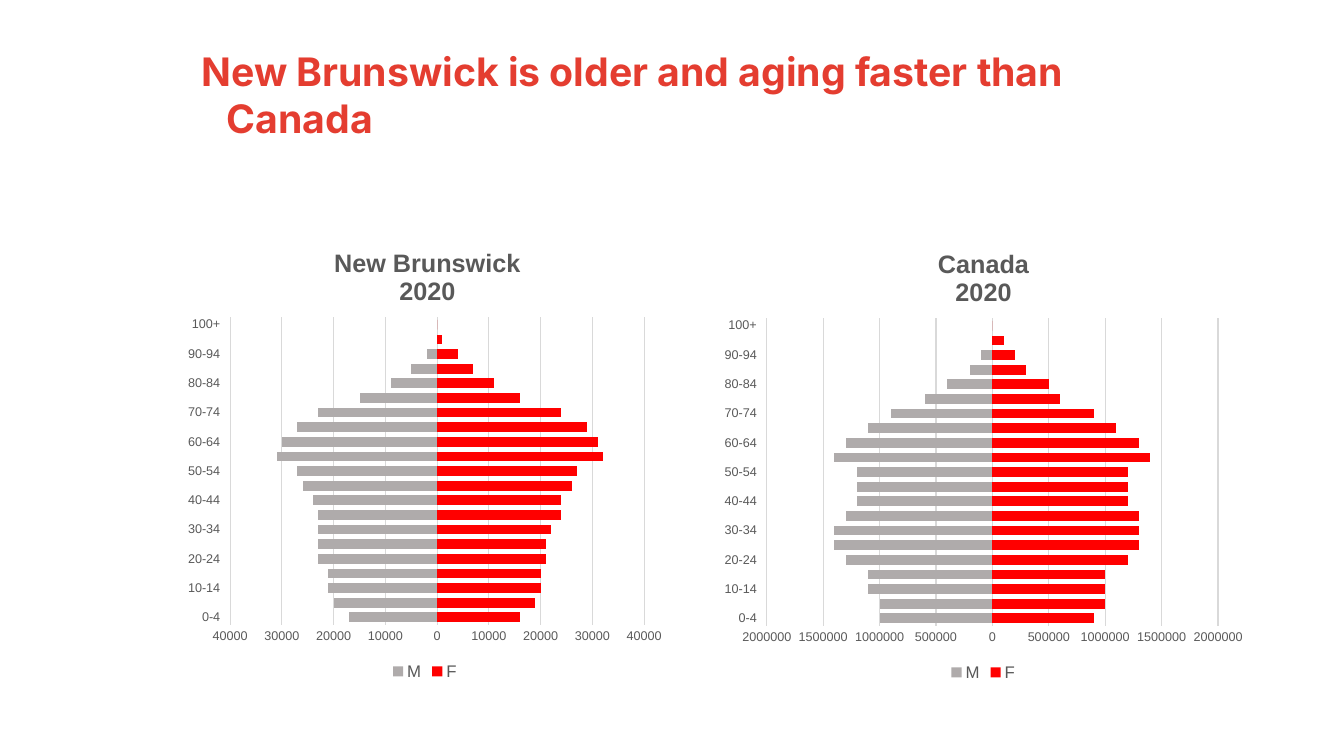
from dataclasses import dataclass

from lxml import etree
from pptx import Presentation
from pptx import util as u
from pptx.chart.data import CategoryChartData
from pptx.dml.color import RGBColor
from pptx.enum import chart as ch
from pptx.enum import text
from pptx.oxml import parse_xml
from pptx.oxml.ns import nsdecls

COLORS = {"title": "E43D30", "text": "595959", "grid": "D9D9D9",
          "M": "AFABAB", "F": "FF0000"}
CELL = u.Inches(1 / 12)  # the slide is 160 columns by 90 rows
AGES = [f"{a}-{a + 4}" for a in range(0, 100, 5)] + ["100+"]


@dataclass
class Box:
    col: float
    row: float
    cols: float
    rows: float

    def emu(self) -> list[int]:
        return [round(n * CELL) for n in (self.col, self.row, self.cols, self.rows)]


@dataclass
class Pyramid:
    place: str
    box: Box
    title_x: float
    plot_x: float
    unit: int
    limit: int
    step: int
    men: list[int]
    women: list[int]


PYRAMIDS = [
    Pyramid("New Brunswick", Box(21.24, 26.88, 58.68, 54.6), 0.31, 0.105,
            1000, 40000, 10000,
            [17, 20, 21, 21, 23, 23, 23, 23, 24, 26, 27, 31, 30, 27, 23, 15, 9, 5, 2, 0, 0],
            [16, 19, 20, 20, 21, 21, 22, 24, 24, 26, 27, 32, 31, 29, 24, 16, 11, 7, 4, 1, 0]),
    Pyramid("Canada", Box(85.08, 27, 63.96, 54.6), 0.41, 0.097,
            100000, 2000000, 500000,
            [10, 10, 11, 11, 13, 14, 14, 13, 12, 12, 12, 14, 13, 11, 9, 6, 4, 2, 1, 0, 0],
            [9, 10, 10, 10, 12, 13, 13, 13, 12, 12, 12, 14, 13, 11, 9, 6, 5, 3, 2, 1, 0]),
]


def rgb(name: str) -> RGBColor:
    return RGBColor.from_string(COLORS[name])


def style_font(font, size: float, color: str, name: str = "Arial", bold: bool = False) -> None:
    font.size, font.name, font.bold = u.Pt(size), name, bold
    font.color.rgb = rgb(color)


def style_line(line) -> None:
    line.color.rgb = rgb("grid")
    line.width = u.Pt(0.75)


def manual_layout(inner: bool, **shares: float) -> etree._Element:
    target = '<c:layoutTarget val="inner"/>' if inner else ""
    modes = '<c:xMode val="edge"/><c:yMode val="edge"/>'
    sizes = "".join(f'<c:{k} val="{v}"/>' for k, v in shares.items())
    return parse_xml(f'<c:layout {nsdecls("c")}><c:manualLayout>{target}{modes}{sizes}'
                     '</c:manualLayout></c:layout>')


def set_layout(parent, layout, before: str) -> None:
    for old in parent.findall(layout.tag):
        parent.remove(old)
    parent.xpath(before)[0].addprevious(layout)


def add_title(s, box: Box, words: str) -> None:
    sp = s.shapes.title
    sp.left, sp.top, sp.width, sp.height = box.emu()
    tf = sp.text_frame
    tf.word_wrap, tf.auto_size = True, text.MSO_AUTO_SIZE.NONE
    tf.vertical_anchor = text.MSO_ANCHOR.TOP
    p = tf.paragraphs[0]
    p.alignment = text.PP_ALIGN.LEFT
    pPr = p._p.get_or_add_pPr()
    pPr.set("marL", str(u.Inches(0.5)))
    pPr.set("indent", str(u.Inches(-0.25)))
    r = p.add_run()
    r.text = words
    style_font(r.font, 28, "title", "Inter", True)


def add_pyramid(s, item: Pyramid) -> None:
    data = CategoryChartData()
    data.categories = AGES
    data.add_series("M", [-v * item.unit for v in item.men])
    data.add_series("F", [v * item.unit for v in item.women])
    chart = s.shapes.add_chart(ch.XL_CHART_TYPE.BAR_STACKED, *item.box.emu(), data).chart
    style_font(chart.font, 10, "text")

    # Chart title
    tf = chart.chart_title.text_frame
    for i, line in enumerate((item.place, "2020")):
        p = tf.add_paragraph() if i else tf.paragraphs[0]
        r = p.add_run()
        r.text = line
        style_font(r.font, 18, "text", bold=True)
    chart.chart_title.include_in_layout = False
    set_layout(chart.chart_title._element, manual_layout(False, x=item.title_x, y=0.04),
               "c:overlay")

    # Bars
    plot = chart.plots[0]
    plot.gap_width, plot.overlap, plot.vary_by_categories = 50, 100, False
    for series in plot.series:
        series.invert_if_negative = False
        series.format.fill.solid()
        series.format.fill.fore_color.rgb = rgb(series.name)
    set_layout(chart._chartSpace.xpath("c:chart/c:plotArea")[0],
               manual_layout(True, x=item.plot_x, y=0.2, w=0.84, h=0.67), "c:barChart")

    # Axes
    ages, people = chart.category_axis, chart.value_axis
    for axis in (ages, people):
        axis.major_tick_mark = axis.minor_tick_mark = ch.XL_TICK_MARK.NONE
        style_font(axis.tick_labels.font, 9, "text")
    ages.tick_label_position = ch.XL_TICK_LABEL_POSITION.LOW
    style_line(ages.format.line)
    people.minimum_scale, people.maximum_scale = -item.limit, item.limit
    people.major_unit = item.step
    people.tick_labels.number_format = "0;0"
    people.tick_labels.number_format_is_linked = False
    people.format.line.fill.background()
    people.has_major_gridlines = True
    style_line(people.major_gridlines.format.line)

    # Legend
    chart.has_legend = True
    chart.legend.position = ch.XL_LEGEND_POSITION.BOTTOM
    chart.legend.include_in_layout = False
    style_font(chart.legend.font, 12, "text")


def main() -> None:
    prs = Presentation()
    prs.slide_width, prs.slide_height = 160 * CELL, 90 * CELL
    s = prs.slides.add_slide(prs.slide_layouts[5])
    add_title(s, Box(19.8, 5.04, 116.52, 15.6),
              "New Brunswick is older and aging faster than Canada")
    for item in PYRAMIDS:
        add_pyramid(s, item)
    prs.save("out.pptx")


if __name__ == "__main__":
    main()
